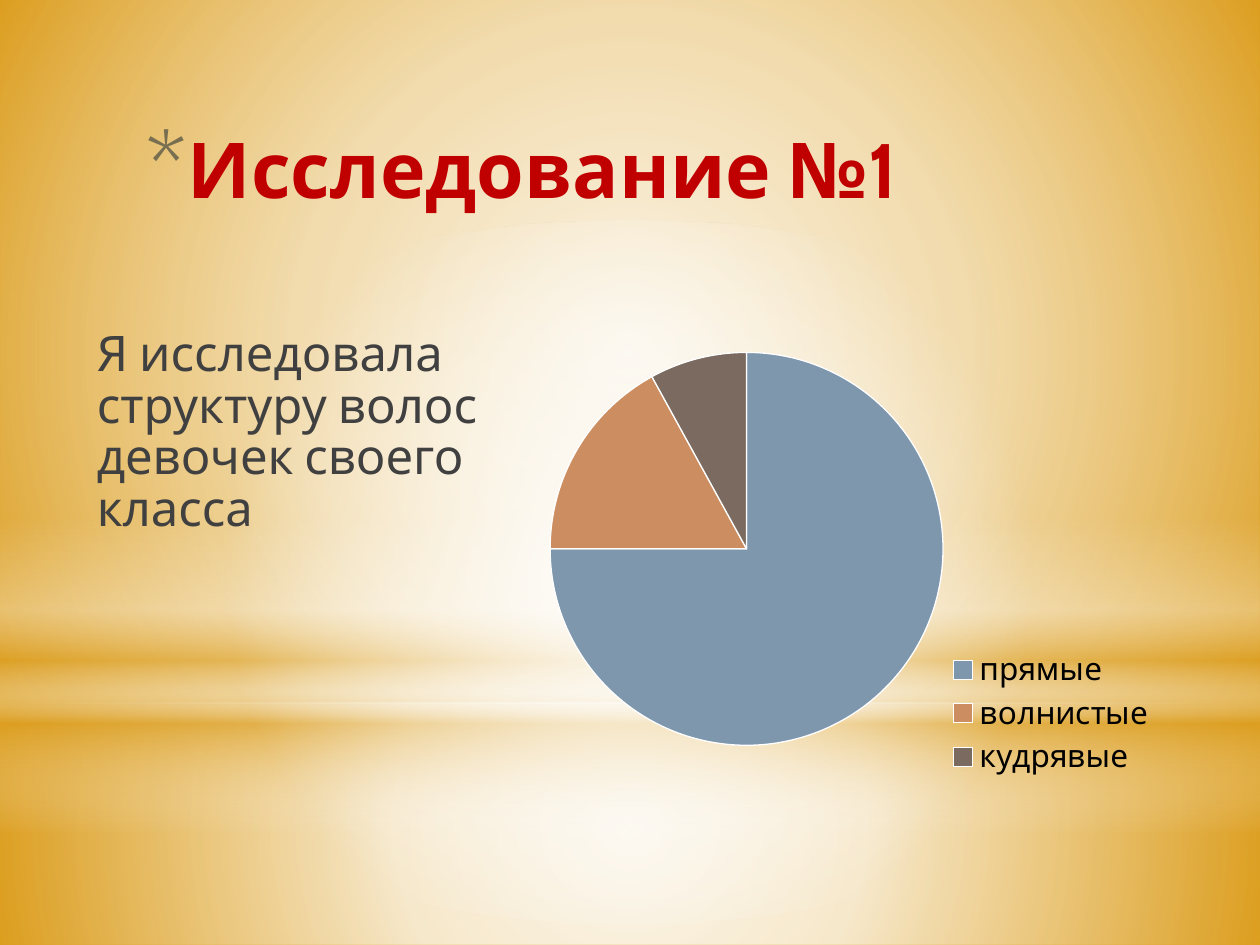
from lxml import etree
from pptx import Presentation
from pptx.chart.data import CategoryChartData
from pptx.dml.color import RGBColor
from pptx.enum import chart as ch, shapes, text
from pptx.oxml import parse_xml
from pptx.oxml.ns import nsdecls, qn
from pptx.util import Inches, Pt

COLORS = {
    "gold": "DC9E1F", "white": "FFFFFF", "red": "C00000", "gray": "404040",
    "olive": "786F51", "black": "000000",
    "blue": "7E97AD", "orange": "CC8E60", "brown": "7A6A60",
}
FONT = "Cabin"


def hue(name):
    return RGBColor.from_string(COLORS[name])


def write(para, words, size, color, bold=False, before=0, after=0, line=None):
    run = para.add_run()
    run.text = words
    font = run.font
    font.name, font.size, font.bold = FONT, Pt(size), bold
    font.color.rgb = hue(color)
    para.space_before, para.space_after = Pt(before), Pt(after)
    if line:
        para.line_spacing = line


def bullet(para, sign, color, scale, indent):
    props = para._p.get_or_add_pPr()
    props.set("marL", str(Inches(indent)))
    props.set("indent", str(-Inches(indent)))
    tint = etree.SubElement(props, qn("a:buClr"))
    etree.SubElement(tint, qn("a:srgbClr"), val=COLORS[color])
    etree.SubElement(props, qn("a:buSzPct"), val=str(scale * 1000))
    etree.SubElement(props, qn("a:buFont"), typeface=FONT)
    etree.SubElement(props, qn("a:buChar"), char=sign)


def place(part, x, y, w, h):
    """Give a chart part a fixed box, as fractions of the chart."""
    old = part.find(qn("c:layout"))
    if old is not None:
        part.remove(old)
    sizes = "".join(f'<c:{k} val="{v}"/>' for k, v in zip("xywh", (x, y, w, h)))
    inner = '<c:layoutTarget val="inner"/>' if part.tag == qn("c:plotArea") else ""
    box = parse_xml(
        f'<c:layout {nsdecls("c")}><c:manualLayout>{inner}<c:xMode val="edge"/>'
        f'<c:yMode val="edge"/>{sizes}</c:manualLayout></c:layout>')
    lead = part.find(qn("c:legendPos"))
    if lead is None:
        part.insert(0, box)
    else:
        lead.addnext(box)


class Deck:
    """Hold the style and the current slide."""

    def __init__(self):
        self.prs = Presentation()
        self.prs.slide_width, self.prs.slide_height = Inches(10), Inches(7.5)
        self.slide = self.prs.slides.add_slide(self.prs.slide_layouts[6])
        fill = self.slide.background.fill
        fill.solid()
        fill.fore_color.rgb = hue("gold")

    def glow(self, box, stops, kind=shapes.MSO_SHAPE.RECTANGLE, angle=None):
        shape = self.slide.shapes.add_shape(kind, *map(Inches, box))
        shape.shadow.inherit = False
        shape.line.fill.background()
        shape.fill.background()
        marks = "".join(
            f'<a:gs pos="{pos * 1000}"><a:srgbClr val="{COLORS[name]}">'
            f'<a:alpha val="{alpha * 1000}"/></a:srgbClr></a:gs>'
            for pos, name, alpha in stops)
        if angle is None:
            way = ('<a:path path="circle"><a:fillToRect l="50000" t="50000" '
                   'r="50000" b="50000"/></a:path>')
        else:
            way = f'<a:lin ang="{angle * 60000}" scaled="0"/>'
        grad = parse_xml(f'<a:gradFill {nsdecls("a")} rotWithShape="1">'
                         f'<a:gsLst>{marks}</a:gsLst>{way}</a:gradFill>')
        props = shape._element.spPr
        props.replace(props.find(qn("a:noFill")), grad)

    def label(self, box, words, anchor=text.MSO_ANCHOR.TOP, foot=0.05, **style):
        frame = self.slide.shapes.add_textbox(*map(Inches, box)).text_frame
        frame.word_wrap = True
        frame.vertical_anchor = anchor
        frame.margin_bottom = Inches(foot)
        para = frame.paragraphs[0]
        write(para, words, **style)
        return para

    def pie(self, box, parts):
        data = CategoryChartData()
        data.categories = [name for name, _, _ in parts]
        data.add_series("Series 1", [value for _, value, _ in parts])
        chart = self.slide.shapes.add_chart(
            ch.XL_CHART_TYPE.PIE, *map(Inches, box), data).chart
        chart.has_title = False
        chart.font.name, chart.font.size = FONT, Pt(18)
        chart.font.color.rgb = hue("black")
        chart.has_legend = True
        chart.legend.position = ch.XL_LEGEND_POSITION.RIGHT
        chart.legend.include_in_layout = False
        plot = chart.plots[0]
        plot.vary_by_categories = True
        for i, (_, _, color) in enumerate(parts):
            look = plot.series[0].points[i].format
            look.fill.solid()
            look.fill.fore_color.rgb = hue(color)
            look.line.color.rgb = hue("white")
            look.line.width = Pt(0.75)
        place(chart._chartSpace.chart.plotArea, 0.03, 0.22, 0.6, 0.55)
        place(chart.legend._element, 0.62, 0.63, 0.35, 0.19)


def main():
    deck = Deck()
    deck.glow((0, 5.58, 10, 1.92),
              [(0, "white", 91), (37, "white", 76), (100, "gold", 79)])
    deck.glow((0, 0, 10, 5.58),
              [(0, "white", 89), (48, "white", 62), (100, "gold", 79)])
    deck.glow((0, 4.12, 10, 2.5),
              [(0, "white", 0), (29, "white", 30), (45, "gold", 40),
               (55, "white", 26), (65, "gold", 60), (100, "white", 0)], angle=90)
    deck.glow((0, 1.75, 10, 5.58), [(0, "white", 100), (56, "white", 0)],
              kind=shapes.MSO_SHAPE.OVAL)
    title = deck.label((1.06, 0.6, 8.58, 1.1), "Исследование №1",
                       anchor=text.MSO_ANCHOR.BOTTOM, foot=0,
                       size=44, color="red", bold=True)
    bullet(title, "*", "olive", 128, 0.25)
    deck.pie((4.21, 1.55, 5.2, 5.67),
             [("прямые", 75, "blue"), ("волнистые", 17, "orange"),
              ("кудрявые", 8, "brown")])
    deck.label((0.67, 2.57, 3.71, 2.34),
               "Я исследовала структуру волос девочек своего класса",
               size=28, color="gray", before=3, after=3, line=0.88)
    deck.prs.save("out.pptx")


if __name__ == "__main__":
    main()
